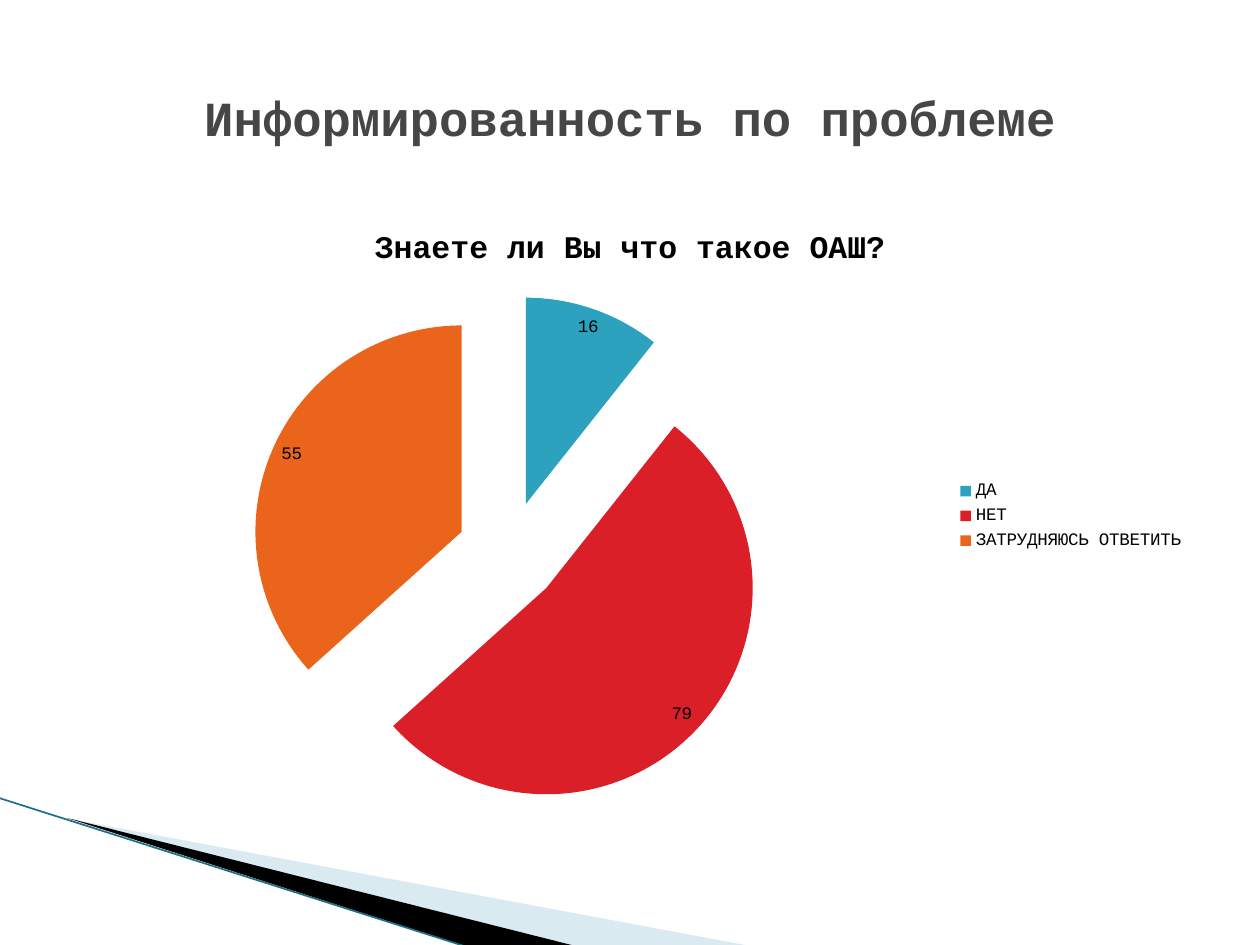
from lxml.etree import SubElement
from pptx import Presentation
from pptx.chart.data import CategoryChartData
from pptx.dml.color import RGBColor
from pptx.enum.chart import XL_CHART_TYPE, XL_LABEL_POSITION, XL_LEGEND_POSITION
from pptx.enum.shapes import MSO_CONNECTOR
from pptx.enum.text import MSO_ANCHOR, PP_ALIGN
from pptx.oxml import parse_xml
from pptx.oxml.ns import nsdecls, qn
from pptx.util import Pt

PX = 914400 // 126
FONT = "Courier New"
BLACK = RGBColor(0x00, 0x00, 0x00)
GREY = RGBColor(0x46, 0x46, 0x46)
PALE_BLUE = RGBColor(0xA0, 0xCB, 0xDC)
DARK_TEAL = RGBColor(0x1B, 0x70, 0x84)

TITLE = "Информированность по проблеме"
QUESTION = "Знаете ли Вы что такое ОАШ?"
ANSWERS = [
    ("ДА", 16, RGBColor(0x2D, 0xA2, 0xBF)),
    ("НЕТ", 79, RGBColor(0xDA, 0x1F, 0x28)),
    ("ЗАТРУДНЯЮСЬ ОТВЕТИТЬ", 55, RGBColor(0xEB, 0x64, 0x1B)),
]
TITLE_BOX = (63, 38, 1134, 158)
CHART_BOX = (63, 204, 1134, 624)
# Frame, corner points, colour, opacity in percent
WEDGES = [
    ((98, 689, 524, 199), [(69, 819), (750, 946), (575, 946)], PALE_BLUE, 40),
    ((-8, 798, 524, 116), [(67, 818), (575, 946), (468, 947)], BLACK, 100),
]
EDGE = (-1, 798, 467, 947)


def emu(lengths):
    return [length * PX for length in lengths]


def place(shape, box):
    shape.left, shape.top, shape.width, shape.height = emu(box)


def add_wedge(slide, frame, points, color, opacity):
    """Draw a triangle whose corners may lie outside its frame."""
    builder = slide.shapes.build_freeform(*points[0], scale=PX)
    builder.add_line_segments(points[1:], close=True)
    wedge = builder.convert_to_shape()
    place(wedge, frame)
    left, top, width, height = frame
    outline = next(wedge._element.iter(qn("a:path")))
    outline.set("w", str(width))
    outline.set("h", str(height))
    for corner, (x, y) in zip(outline.iter(qn("a:pt")), points):
        corner.set("x", str(x - left))
        corner.set("y", str(y - top))
    wedge.shadow.inherit = False
    wedge.line.fill.background()
    wedge.fill.solid()
    wedge.fill.fore_color.rgb = color
    if opacity < 100:
        rgb = next(wedge._element.spPr.iter(qn("a:srgbClr")))
        SubElement(rgb, qn("a:alpha")).set("val", str(opacity * 1000))


def add_edge(slide):
    edge = slide.shapes.add_connector(MSO_CONNECTOR.STRAIGHT, *emu(EDGE))
    edge.line.color.rgb = DARK_TEAL
    edge.line.width = Pt(0.95)
    SubElement(edge._element.spPr, qn("a:effectLst"))


def set_title(slide):
    title = slide.shapes.title
    place(title, TITLE_BOX)
    title.text_frame.text = TITLE
    title.text_frame.vertical_anchor = MSO_ANCHOR.MIDDLE
    para = title.text_frame.paragraphs[0]
    para.alignment = PP_ALIGN.CENTER
    para.font.name, para.font.size, para.font.bold = FONT, Pt(28), True
    para.font.color.rgb = GREY


def add_pie(slide):
    data = CategoryChartData()
    data.categories = [name for name, _, _ in ANSWERS]
    data.add_series(QUESTION, [count for _, count, _ in ANSWERS])
    chart = slide.shapes.add_chart(XL_CHART_TYPE.PIE, *emu(CHART_BOX), data).chart
    chart.font.name, chart.font.size = FONT, Pt(10)
    chart.font.color.rgb = BLACK

    chart.has_title = True
    chart.chart_title.include_in_layout = False
    chart.chart_title.text_frame.text = QUESTION
    font = chart.chart_title.text_frame.paragraphs[0].font
    font.name, font.size, font.bold = FONT, Pt(18), True
    font.color.rgb = BLACK

    chart.has_legend = True
    chart.legend.position = XL_LEGEND_POSITION.RIGHT
    chart.legend.include_in_layout = False

    plot = chart.plots[0]
    plot.vary_by_categories = True
    plot.has_data_labels = True
    plot.data_labels.show_value = True
    plot.data_labels.show_percentage = False
    plot.data_labels.position = XL_LABEL_POSITION.BEST_FIT

    series = plot.series[0]
    for index, (_, _, color) in enumerate(ANSWERS):
        fill = series.points[index].format.fill
        fill.solid()
        fill.fore_color.rgb = color
    explosion = parse_xml(f'<c:explosion {nsdecls("c")} val="25"/>')
    series._element.find(qn("c:dPt")).addprevious(explosion)


def main():
    deck = Presentation()
    deck.slide_width, deck.slide_height = emu((1260, 945))
    page = deck.slides.add_slide(deck.slide_layouts[5])
    for wedge in WEDGES:
        add_wedge(page, *wedge)
    add_edge(page)
    set_title(page)
    add_pie(page)
    deck.save("out.pptx")


if __name__ == "__main__":
    main()
